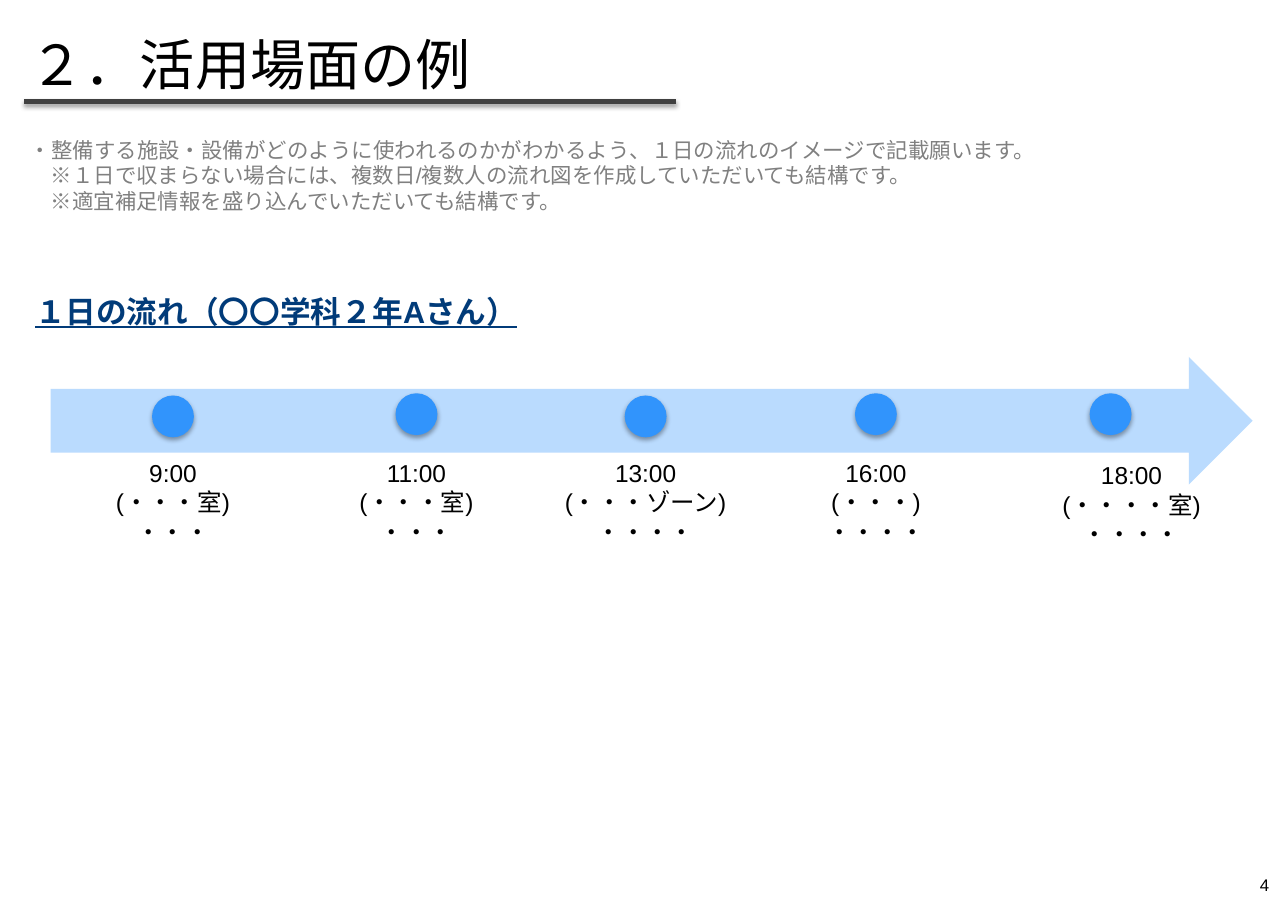
from pptx import Presentation
from pptx import util as u
from pptx.dml.color import RGBColor
from pptx.enum import shapes, text
from pptx.oxml import parse_xml
from pptx.oxml.ns import nsdecls, qn

PX = 9144  # 100 px to the inch
THEME = {
    "font": "Arial",
    "ink": "000000", "note": "808080", "head": "013B79",
    "rule": "404040", "band": "BADBFE", "dot": "3194FC",
    "title_pt": 36, "head_pt": 20, "label_pt": 16, "note_pt": 14, "page_pt": 11,
}
ALIGN = text.PP_ALIGN
ANCHOR = text.MSO_ANCHOR


def write(box, lines, size, color="ink", align=ALIGN.LEFT, anchor=ANCHOR.TOP,
          bold=False, line=False, inset=(10, 5), indents=()):
    """Fill a box with one paragraph per line, without bullets."""
    frame = box.text_frame
    frame.word_wrap = True
    frame.auto_size = text.MSO_AUTO_SIZE.NONE
    frame.vertical_anchor = anchor
    frame.margin_left = frame.margin_right = inset[0] * PX
    frame.margin_top = frame.margin_bottom = inset[1] * PX
    frame.text = "\n".join(lines)
    for i, para in enumerate(frame.paragraphs):
        props = para._p.get_or_add_pPr()
        props.set("marL", str(indents[i] * PX if indents else 0))
        props.set("indent", "0")
        props.append(parse_xml(f"<a:buNone {nsdecls('a')}/>"))
        para.alignment = align
        para.space_before = u.Pt(0)
        for run in para.runs:
            font = run.font
            font.name = THEME["font"]
            font.size = u.Pt(THEME[size])
            font.bold, font.underline = bold, line
            font.color.rgb = RGBColor.from_string(THEME[color])
            east = parse_xml(f'<a:ea {nsdecls("a")} typeface="{THEME["font"]}"/>')
            font._element.find(qn("a:latin")).addnext(east)


def shade(item, alpha, dist):
    """Add a soft shadow that falls straight down."""
    item._element.spPr.append(parse_xml(
        f'<a:effectLst {nsdecls("a")}><a:outerShdw blurRad="{u.Pt(3.1)}" '
        f'dist="{u.Pt(dist)}" dir="5400000" rotWithShape="0"><a:srgbClr val="000000">'
        f'<a:alpha val="{alpha * 1000}"/></a:srgbClr></a:outerShdw></a:effectLst>'))


deck = Presentation()
deck.slide_width, deck.slide_height = 1169 * PX, 827 * PX
slide = deck.slides.add_slide(deck.slide_layouts[1])
parts = slide.shapes

# Title and rule
title = parts.title
title.left, title.top, title.width, title.height = [n * PX for n in (17, 23, 1082, 71)]
write(title, ["２．活用場面の例"], "title_pt")
rule = parts.add_connector(shapes.MSO_CONNECTOR.STRAIGHT, 22 * PX, 92 * PX, 614 * PX, 92 * PX)
rule.line.color.rgb = RGBColor.from_string(THEME["rule"])
rule.line.width = u.Pt(3.5)
shade(rule, 38, 1.6)

# Guidance
note = slide.placeholders[1]
note.left, note.top, note.width, note.height = [n * PX for n in (17, 119, 1073, 81)]
write(note, [
    "・整備する施設・設備がどのように使われるのかがわかるよう、１日の流れのイメージで記載願います。",
    "※１日で収まらない場合には、複数日/複数人の流れ図を作成していただいても結構です。",
    "※適宜補足情報を盛り込んでいただいても結構です。",
], "note_pt", color="note", indents=(0, 19, 19))

# Timeline
head = parts.add_textbox(22 * PX, 261 * PX, 1047 * PX, 44 * PX)
write(head, ["１日の流れ（〇〇学科２年Aさん）"], "head_pt", color="head", bold=True, line=True)
band = parts.add_shape(shapes.MSO_SHAPE.RIGHT_ARROW, 46 * PX, 324 * PX, 1091 * PX, 116 * PX)
band.shadow.inherit = False
band.fill.solid()
band.fill.fore_color.rgb = RGBColor.from_string(THEME["band"])
band.line.fill.background()

DOT, WIDE = 38, 250
stops = [  # dot centre, dot top, label centre, label top, label
    (157, 359, 157, 411, ["9:00", "(・・・室)", "・・・"]),
    (378, 357, 378, 411, ["11:00", "(・・・室)", "・・・"]),
    (586, 359, 586, 411, ["13:00", "(・・・ゾーン)", "・・・・"]),
    (795, 357, 795, 411, ["16:00", "(・・・)", "・・・・"]),
    (1008, 357, 1027, 413, ["18:00", "(・・・・室)", "・・・・"]),
]
for mid, top, center, low, lines in stops:
    dot = parts.add_shape(shapes.MSO_SHAPE.OVAL, (mid - DOT // 2) * PX, top * PX, DOT * PX, DOT * PX)
    dot.fill.solid()
    dot.fill.fore_color.rgb = RGBColor.from_string(THEME["dot"])
    dot.line.fill.background()
    shade(dot, 35, 1.8)
    label = parts.add_textbox((center - WIDE // 2) * PX, low * PX, WIDE * PX, 91 * PX)
    write(label, lines, "label_pt", align=ALIGN.CENTER)

# Page number
page = parts.add_textbox(1128 * PX, 788 * PX, 24 * PX, 24 * PX)
write(page, ["4"], "page_pt", align=ALIGN.RIGHT, anchor=ANCHOR.BOTTOM, inset=(0, 0))

deck.save("out.pptx")
